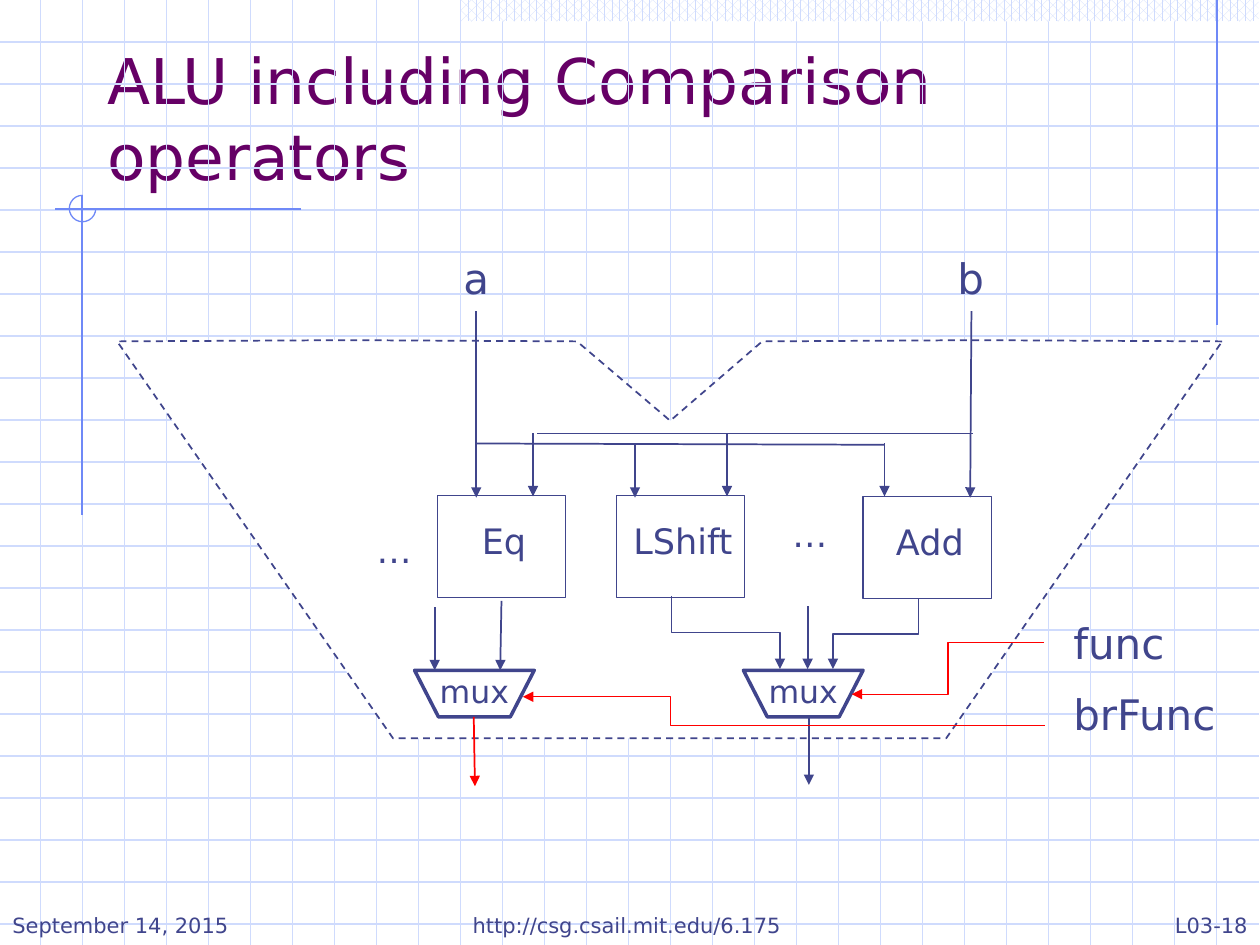
from lxml import etree
from pptx import Presentation
from pptx.dml.color import RGBColor
from pptx.enum import dml, shapes, text
from pptx.oxml import ns
from pptx.util import Inches, Pt

COLORS = {"ink": "40458C", "title": "660066", "rule": "6F89F7",
          "band": "CFDBFD", "control": "FF0000", "white": "FFFFFF"}
FONT = "DejaVu Sans"


def rgb(name):
    return RGBColor.from_string(COLORS[name])


def style_line(sp, color="ink", width=1, head=False, tail=False):
    sp.line.color.rgb = rgb(color)
    sp.line.width = Pt(width)
    ln = sp.line._get_or_add_ln()
    for tag, wanted in (("a:headEnd", head), ("a:tailEnd", tail)):
        if wanted:
            etree.SubElement(ln, ns.qn(tag), type="triangle")


def connect(s, start, end, kind="STRAIGHT", **line):
    c = s.shapes.add_connector(getattr(shapes.MSO_CONNECTOR, kind),
                               *map(Inches, (*start, *end)))
    etree.SubElement(c._element.spPr, ns.qn("a:effectLst"))
    style_line(c, **line)
    return c


def connect_down(s, start, end):
    """Elbow that leaves and arrives vertically: a turned horizontal one."""
    (x1, y1), (x2, y2) = start, end
    cx, cy = (x1 + x2) / 2, (y1 + y2) / 2
    half_w, half_h = (y2 - y1) / 2, abs(x2 - x1) / 2
    if x2 > x1:
        half_w, turn = -half_w, 270
    else:
        turn = 90
    c = connect(s, (cx - half_w, cy - half_h), (cx + half_w, cy + half_h),
                "ELBOW", tail=True)
    c._element.spPr.xfrm.set("rot", str(turn * 60000))


def polyline(s, points, close=False):
    pts = [(Inches(x), Inches(y)) for x, y in points]
    fb = s.shapes.build_freeform(*pts[0])
    fb.add_line_segments(pts[1:], close=close)
    sp = fb.convert_to_shape()
    sp.shadow.inherit = False
    sp.fill.background()
    return sp


def preset(s, kind, box):
    sp = s.shapes.add_shape(kind, *map(Inches, box))
    sp.shadow.inherit = False
    sp.fill.background()
    return sp


def write(tf, words, size, align="LEFT", color="ink", spacing=None):
    p = tf.paragraphs[0]
    p.alignment = getattr(text.PP_ALIGN, align)
    p.line_spacing = spacing
    r = p.add_run()
    r.text = words
    r.font.name, r.font.size = FONT, Pt(size)
    r.font.color.rgb = rgb(color)


def label(s, words, box, size):
    tf = s.shapes.add_textbox(*map(Inches, box)).text_frame
    tf.word_wrap = False
    tf.auto_size = text.MSO_AUTO_SIZE.SHAPE_TO_FIT_TEXT
    write(tf, words, size, spacing=0.9)


def decoration(s, x, y, w, h):
    # Pale background grid, three lines to the inch
    for i in range(1, 23):
        connect(s, (x - 0.01, y + i / 3), (x + w - 0.01, y + i / 3),
                color="band", width=0.75)
    for i in range(1, 30):
        connect(s, (x + i / 3 - 0.01, y), (x + i / 3 - 0.01, y + h),
                color="band", width=0.75)
    # Patterned band along the top right
    band = preset(s, shapes.MSO_SHAPE.RECTANGLE, (x + 3.66, y, w - 3.67, 0.17))
    band.fill.patterned()
    band.fill.pattern = dml.MSO_PATTERN.PERCENT_60
    band.fill.fore_color.rgb = rgb("band")
    band.fill.back_color.rgb = rgb("white")
    band.line.fill.background()
    # Rules and the three-quarter ring where they cross
    for start, end in (((9.66, 0), (9.66, 2.58)), ((2.39, 1.66), (0.44, 1.66)),
                       ((0.65, 1.55), (0.65, 4.09))):
        connect(s, (x + start[0], y + start[1]), (x + end[0], y + end[1]),
                color="rule", width=0.75)
    ring = preset(s, shapes.MSO_SHAPE.ARC, (x + 0.55, y + 1.55, 0.21, 0.21))
    ring.adjustments[0] = 0
    ring.adjustments[1] = 270 * 60000 / 100000
    style_line(ring, "rule", 0.75)


def title(s, x, y, w, h):
    sp = s.shapes.title
    sp.left, sp.top, sp.width, sp.height = map(Inches, (x, y, w, h))
    tf = sp.text_frame
    tf.word_wrap = True
    tf.auto_size = text.MSO_AUTO_SIZE.NONE
    tf.vertical_anchor = text.MSO_ANCHOR.BOTTOM
    write(tf, "ALU including Comparison operators", 36, color="title")


def block(s, words, x, y):
    sp = preset(s, shapes.MSO_SHAPE.RECTANGLE, (x, y, 1.02, 0.81))
    style_line(sp, width=0.75)
    tf = sp.text_frame
    tf.margin_left, tf.margin_right = Inches(0.04), 0
    tf.margin_top, tf.margin_bottom = 0, Inches(0.05)
    tf.word_wrap = False
    tf.vertical_anchor = text.MSO_ANCHOR.MIDDLE
    write(tf, words, 20, "CENTER", spacing=0.9)


def mux(s, x, y):
    sp = preset(s, shapes.MSO_SHAPE.FLOWCHART_MANUAL_OPERATION,
                (x, y, 0.95, 0.37))
    sp.fill.solid()
    sp.fill.fore_color.rgb = rgb("white")
    style_line(sp, width=2)
    sp.text_frame.word_wrap = False
    sp.text_frame.vertical_anchor = text.MSO_ANCHOR.MIDDLE
    write(sp.text_frame, "mux", 18, "CENTER", spacing=0.9)


def alu(s, x, y):
    def at(dx, dy):
        return x + dx, y + dy

    # Dashed ALU outline
    outline = polyline(s, [at(*p) for p in (
        (8.8, 0.71), (6.86, 0.7), (5.15, 0.71), (4.42, 1.34), (3.68, 0.71),
        (1.86, 0.7), (0.03, 0.71), (2.22, 3.86), (6.61, 3.86))], close=True)
    outline.fill.solid()
    outline.fill.fore_color.rgb = rgb("white")
    style_line(outline)
    outline.line.dash_style = dml.MSO_LINE.DASH

    # Function blocks and multiplexers
    for words, dx, dy in (("Eq", 2.57, 1.93), ("LShift", 3.99, 1.93),
                          ("Add", 5.95, 1.94)):
        block(s, words, *at(dx, dy))
    for dx in (2.39, 5):
        mux(s, *at(dx, 3.32))

    # Operand buses
    connect(s, at(6.82, 1.44), at(3.36, 1.44))
    connect(s, at(6.12, 1.53), at(2.88, 1.52))

    # Straight arrows: operands, bus taps, mux inputs, result
    for x1, y1, x2, y2 in (
            (2.88, 0.47, 2.88, 1.95), (6.81, 0.47, 6.8, 1.95),
            (3.33, 1.44, 3.33, 1.94), (4.87, 1.44, 4.87, 1.94),
            (4.14, 1.53, 4.14, 1.95), (6.12, 1.52, 6.12, 1.94),
            (2.55, 2.82, 2.55, 3.32), (3.08, 2.77, 3.07, 3.32),
            (5.51, 2.81, 5.51, 3.31), (5.52, 3.69, 5.52, 4.23)):
        connect(s, at(x1, y1), at(x2, y2), tail=True)
    connect(s, at(2.86, 3.69), at(2.87, 4.24), color="control", tail=True)

    # Block outputs into the right mux
    connect_down(s, at(4.43, 2.73), at(5.29, 3.31))
    connect_down(s, at(6.39, 2.75), at(5.71, 3.31))

    # Control signals
    connect(s, at(5.86, 3.51), at(7.39, 3.1), "ELBOW",
            color="control", width=0.75, head=True)
    br_func = polyline(s, [at(*p) for p in (
        (3.25, 3.53), (4.42, 3.53), (4.42, 3.76), (7.39, 3.76))])
    style_line(br_func, "control", 0.75, head=True)

    # Signal names and ellipses
    for words, dx, dy, w, h, size in (
            ("a", 2.68, 0, 0.4, 0.46, 24), ("b", 6.6, 0, 0.41, 0.46, 24),
            ("func", 7.52, 2.9, 0.92, 0.46, 24),
            ("brFunc", 7.52, 3.46, 1.35, 0.46, 24),
            ("…", 1.99, 2.18, 0.43, 0.4, 20), ("…", 5.29, 2.06, 0.43, 0.4, 20)):
        label(s, words, (*at(dx, dy), w, h), size)


def footer(s, x, y, w, h):
    for words, left, width, align in (
            ("September 14, 2015", x, 2, "LEFT"),
            ("http://csg.csail.mit.edu/6.175", x + 3.39, 3.17, "CENTER"),
            ("L03-18", x + w - 1.08, 1.08, "RIGHT")):
        tf = s.shapes.add_textbox(*map(Inches, (left, y, width, h))).text_frame
        tf.word_wrap = True
        tf.vertical_anchor = text.MSO_ANCHOR.MIDDLE
        write(tf, words, 12, align)


def main():
    prs = Presentation()
    prs.slide_width, prs.slide_height = Inches(10), Inches(7.5)
    s = prs.slides.add_slide(prs.slide_layouts[5])
    decoration(s, 0, 0, 10, 7.5)
    title(s, 0.75, 0.33, 9.22, 1.25)
    alu(s, 0.9, 2)
    footer(s, 0, 7.2, 10, 0.29)
    prs.save("out.pptx")


if __name__ == "__main__":
    main()
